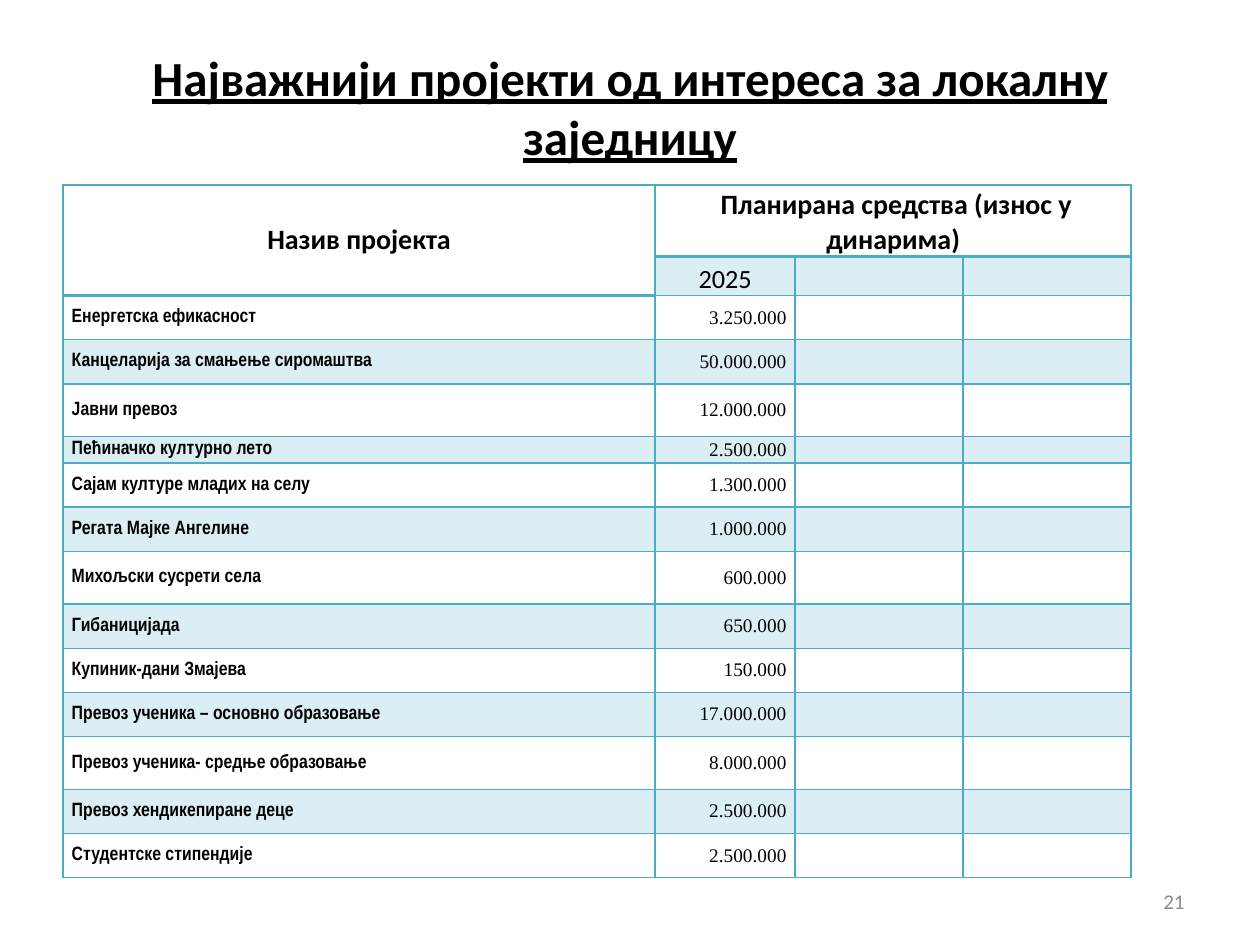
from dataclasses import dataclass
from typing import NamedTuple

from lxml import etree
from pptx import Presentation
from pptx.dml.color import RGBColor
from pptx.enum.text import MSO_ANCHOR, PP_ALIGN
from pptx.oxml.ns import qn
from pptx.util import Pt

LEFT, CENTER, RIGHT = PP_ALIGN.LEFT, PP_ALIGN.CENTER, PP_ALIGN.RIGHT
MIDDLE, BOTTOM = MSO_ANCHOR.MIDDLE, MSO_ANCHOR.BOTTOM
TITLE_ONLY = 5


class TextStyle(NamedTuple):
    font: str
    size: float
    color: str
    align: PP_ALIGN
    anchor: MSO_ANCHOR = MIDDLE
    bold: bool = False
    underline: bool = False


@dataclass(frozen=True)
class Theme:
    accent: str = "4BACC6"
    band_opacity: int = 20
    thin: float = 1
    thick: float = 2
    title: TextStyle = TextStyle("Calibri", 28, "000000", CENTER, bold=True, underline=True)
    number: TextStyle = TextStyle("Calibri", 12, "8C8C8C", RIGHT)
    heading: TextStyle = TextStyle("Calibri", 16, "000000", CENTER, bold=True)
    funds: TextStyle = TextStyle("Calibri", 16, "000000", CENTER, BOTTOM, bold=True)
    year: TextStyle = TextStyle("Calibri", 15, "000000", CENTER, BOTTOM)
    project: TextStyle = TextStyle("Arial Narrow", 11, "000000", LEFT, bold=True)
    amount: TextStyle = TextStyle("Times New Roman", 11, "000000", RIGHT)


class Project(NamedTuple):
    name: str
    amount: str
    height: float = 25.2


THEME = Theme()
TALL, SHORT = 30.24, 15.12
HEADER_HEIGHTS = [41.04, 22.32]
COLUMN_WIDTHS = [338.4, 80, 96, 96]
PROJECTS = [
    Project("Енергетска ефикасност", "3.250.000"),
    Project("Канцеларија за смањење сиромаштва", "50.000.000"),
    Project("Јавни превоз", "12.000.000", TALL),
    Project("Пећиначко културно лето", "2.500.000", SHORT),
    Project("Сајам културе младих на селу", "1.300.000"),
    Project("Регата Мајке Ангелине", "1.000.000"),
    Project("Михољски сусрети села", "600.000", TALL),
    Project("Гибаницијада", "650.000"),
    Project("Купиник-дани Змајева", "150.000"),
    Project("Превоз ученика – основно образовање", "17.000.000"),
    Project("Превоз ученика- средње образовање", "8.000.000", TALL),
    Project("Превоз хендикепиране деце", "2.500.000"),
    Project("Студентске стипендије", "2.500.000"),
]


def write(frame, text: str, style: TextStyle) -> None:
    para = frame.paragraphs[0]
    if text:
        para.add_run().text = text
    para.alignment = style.align
    font = para.font
    font.name, font.size = style.font, Pt(style.size)
    font.bold, font.underline = style.bold, style.underline
    font.color.rgb = RGBColor.from_string(style.color)


def place(shape, left: float, top: float, width: float, height: float) -> None:
    shape.left, shape.top = Pt(left), Pt(top)
    shape.width, shape.height = Pt(width), Pt(height)


def draw_borders(cell, bottom: float) -> None:
    properties = cell._tc.get_or_add_tcPr()
    widths = {"a:lnL": THEME.thin, "a:lnR": THEME.thin, "a:lnT": THEME.thin, "a:lnB": bottom}
    for side, width in widths.items():
        line = etree.SubElement(properties, qn(side), w=str(Pt(width)))
        fill = etree.SubElement(line, qn("a:solidFill"))
        etree.SubElement(fill, qn("a:srgbClr"), val=THEME.accent)


def fill_cell(cell, banded: bool) -> None:
    if not banded:
        cell.fill.background()
        return
    cell.fill.solid()
    cell.fill.fore_color.rgb = RGBColor.from_string(THEME.accent)
    color = cell._tc.tcPr.find(qn("a:solidFill")).find(qn("a:srgbClr"))
    etree.SubElement(color, qn("a:alpha"), val=str(THEME.band_opacity * 1000))


def draw_cell(cell, text: str, style: TextStyle, banded: bool, bottom: float) -> None:
    cell.margin_left = cell.margin_right = Pt(5)
    cell.margin_top = cell.margin_bottom = 0
    cell.vertical_anchor = style.anchor
    write(cell.text_frame, text, style)
    draw_borders(cell, bottom)
    fill_cell(cell, banded)


def draw_table(page) -> None:
    heights = HEADER_HEIGHTS + [project.height for project in PROJECTS]
    rows = [
        ["Назив пројекта", " Планирана средства (износ у динарима)", "", ""],
        ["", "2025", "", ""],
        *([project.name, project.amount, "", ""] for project in PROJECTS),
    ]
    styles = [[THEME.heading] + [THEME.funds] * 3, [THEME.heading] + [THEME.year] * 3]
    body_styles = [THEME.project] + [THEME.amount] * 3
    table = page.shapes.add_table(
        len(rows), len(COLUMN_WIDTHS), Pt(36), Pt(105.6), Pt(sum(COLUMN_WIDTHS)), Pt(sum(heights))
    ).table
    for column, width in zip(table.columns, COLUMN_WIDTHS):
        column.width = Pt(width)
    for row, height in zip(table.rows, heights):
        row.height = Pt(height)
    table.cell(0, 0).merge(table.cell(1, 0))
    table.cell(0, 1).merge(table.cell(0, 3))
    for r, texts in enumerate(rows):
        row_styles = styles[r] if r < len(styles) else body_styles
        for c, text in enumerate(texts):
            banded = r % 2 == 1 and (r, c) != (1, 0)
            bottom = THEME.thick if r == 0 or (r, c) == (1, 0) else THEME.thin
            draw_cell(table.cell(r, c), text, row_styles[c], banded, bottom)


def draw_title(page) -> None:
    title = page.shapes.title
    place(title, 36, 21.6, 648, 78.5)
    title.text_frame.vertical_anchor = THEME.title.anchor
    write(title.text_frame, "Најважнији пројекти од интереса за локалну заједницу", THEME.title)


def draw_page_number(page) -> None:
    box = page.shapes.add_textbox(0, 0, 0, 0)
    place(box, 516, 500.5, 168, 28.75)
    box.text_frame.word_wrap = True
    box.text_frame.vertical_anchor = THEME.number.anchor
    write(box.text_frame, "21", THEME.number)


def main() -> None:
    deck = Presentation()
    deck.slide_width, deck.slide_height = Pt(720), Pt(540)
    page = deck.slides.add_slide(deck.slide_layouts[TITLE_ONLY])
    draw_title(page)
    draw_page_number(page)
    draw_table(page)
    deck.save("out.pptx")


if __name__ == "__main__":
    main()
